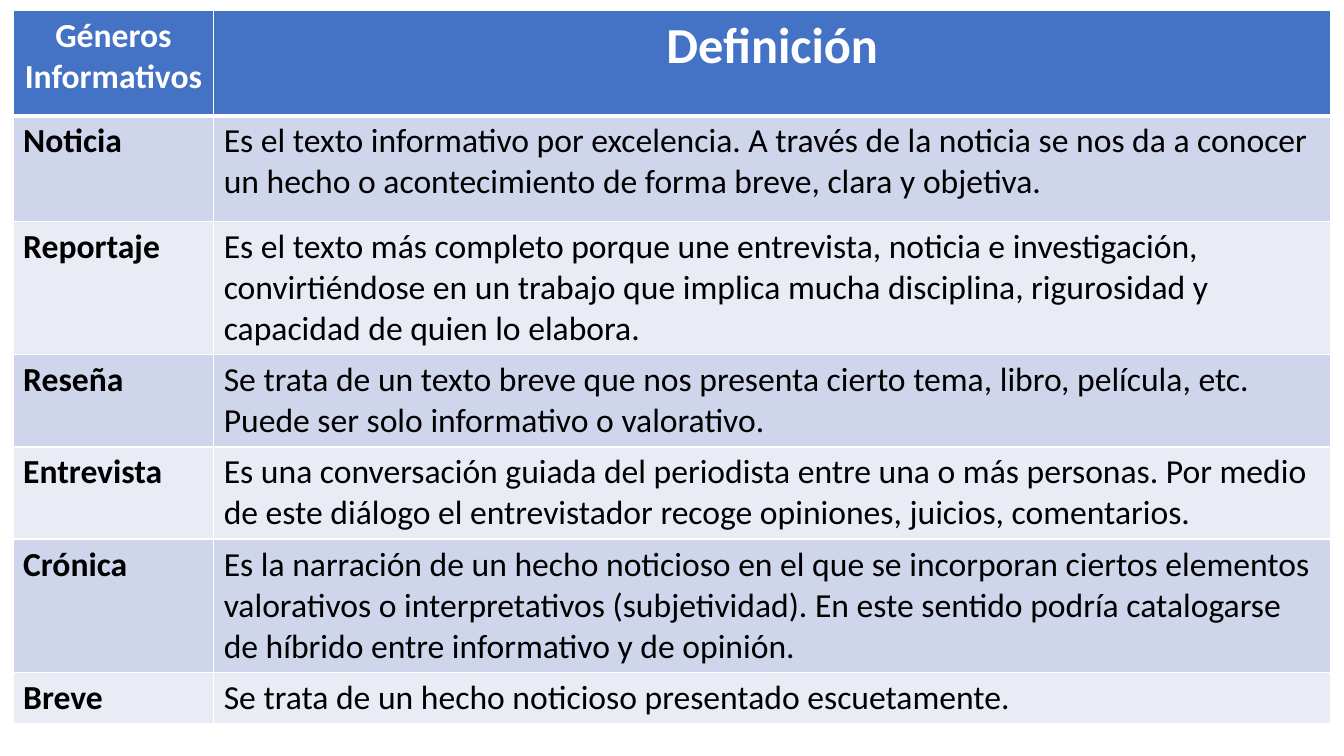
from dataclasses import dataclass

from lxml import etree
from pptx import Presentation
from pptx import util as u
from pptx.dml.color import RGBColor
from pptx.enum import text as t
from pptx.oxml import ns
from pptx.table import Table, _Cell

PX = 9144
FONT = "Calibri"
HUES = {
    "head": "4472C4",
    "dark": "CFD5EA",
    "light": "E9EBF5",
    "white": "FFFFFF",
    "black": "000000",
}


@dataclass
class Genre:
    name: str
    text: str
    high: int


@dataclass
class Style:
    fill: str
    ink: str
    size: int
    bold: bool
    align: t.PP_ALIGN
    top: int = 1
    base: int = 1


GENRES = [
    Genre("Noticia", "Es el texto informativo por excelencia. A través de la noticia se nos da a conocer un hecho o acontecimiento de forma breve, clara y objetiva.", 105),
    Genre("Reportaje", "Es el texto más completo porque une entrevista, noticia e investigación, convirtiéndose en un trabajo que implica mucha disciplina, rigurosidad y capacidad de quien lo elabora.", 117),
    Genre("Reseña", "Se trata de un texto breve que nos presenta cierto tema, libro, película, etc. Puede ser solo informativo o valorativo.", 82),
    Genre("Entrevista", "Es una conversación guiada del periodista entre una o más personas. Por medio de este diálogo el entrevistador recoge opiniones, juicios, comentarios.", 82),
    Genre("Crónica", "Es la narración de un hecho noticioso en el que se incorporan ciertos elementos valorativos o interpretativos (subjetividad). En este sentido podría catalogarse de híbrido entre informativo y de opinión.", 117),
    Genre("Breve", "Se trata de un hecho noticioso presentado escuetamente.", 50),
]
HEAD = Genre("Géneros Informativos", "Definición", 105)
COLS = [199, 1108]


def px(n: int) -> u.Emu:
    return u.Emu(n * PX)


def edge(cell: _Cell, side: str, width: int) -> None:
    props = cell._tc.get_or_add_tcPr()
    line = etree.SubElement(props, ns.qn(f"a:ln{side}"), w=str(u.Pt(width)))
    fill = etree.SubElement(line, ns.qn("a:solidFill"))
    etree.SubElement(fill, ns.qn("a:srgbClr"), val=HUES["white"])


def write(cell: _Cell, words: str, style: Style) -> None:
    for side, width in zip("LRTB", (1, 1, style.top, style.base)):
        edge(cell, side, width)
    cell.fill.solid()
    cell.fill.fore_color.rgb = RGBColor.from_string(HUES[style.fill])
    para = cell.text_frame.paragraphs[0]
    para.alignment = style.align
    run = para.add_run()
    run.text = words
    run.font.name = FONT
    run.font.size = u.Pt(style.size)
    run.font.bold = style.bold
    run.font.color.rgb = RGBColor.from_string(HUES[style.ink])


def draw(grid: Table, row: int, genre: Genre) -> None:
    grid.rows[row].height = px(genre.high)
    for col, words in enumerate((genre.name, genre.text)):
        if row == 0:
            size = 36 if col else 24
            style = Style("head", "white", size, True, t.PP_ALIGN.CENTER, base=3)
        else:
            fill = "dark" if row % 2 else "light"
            top = 3 if row == 1 else 1
            style = Style(fill, "black", 24, col == 0, t.PP_ALIGN.LEFT, top)
        write(grid.cell(row, col), words, style)


def main() -> None:
    deck = Presentation()
    deck.slide_width, deck.slide_height = px(1333), px(750)
    slide = deck.slides.add_slide(deck.slide_layouts[6])
    rows = [HEAD, *GENRES]
    high = sum(genre.high for genre in rows)
    frame = slide.shapes.add_table(
        len(rows), len(COLS), px(13), px(10), px(sum(COLS)), px(high)
    )
    grid = frame.table
    for col, wide in zip(grid.columns, COLS):
        col.width = px(wide)
    for row, genre in enumerate(rows):
        draw(grid, row, genre)
    deck.save("out.pptx")


if __name__ == "__main__":
    main()
